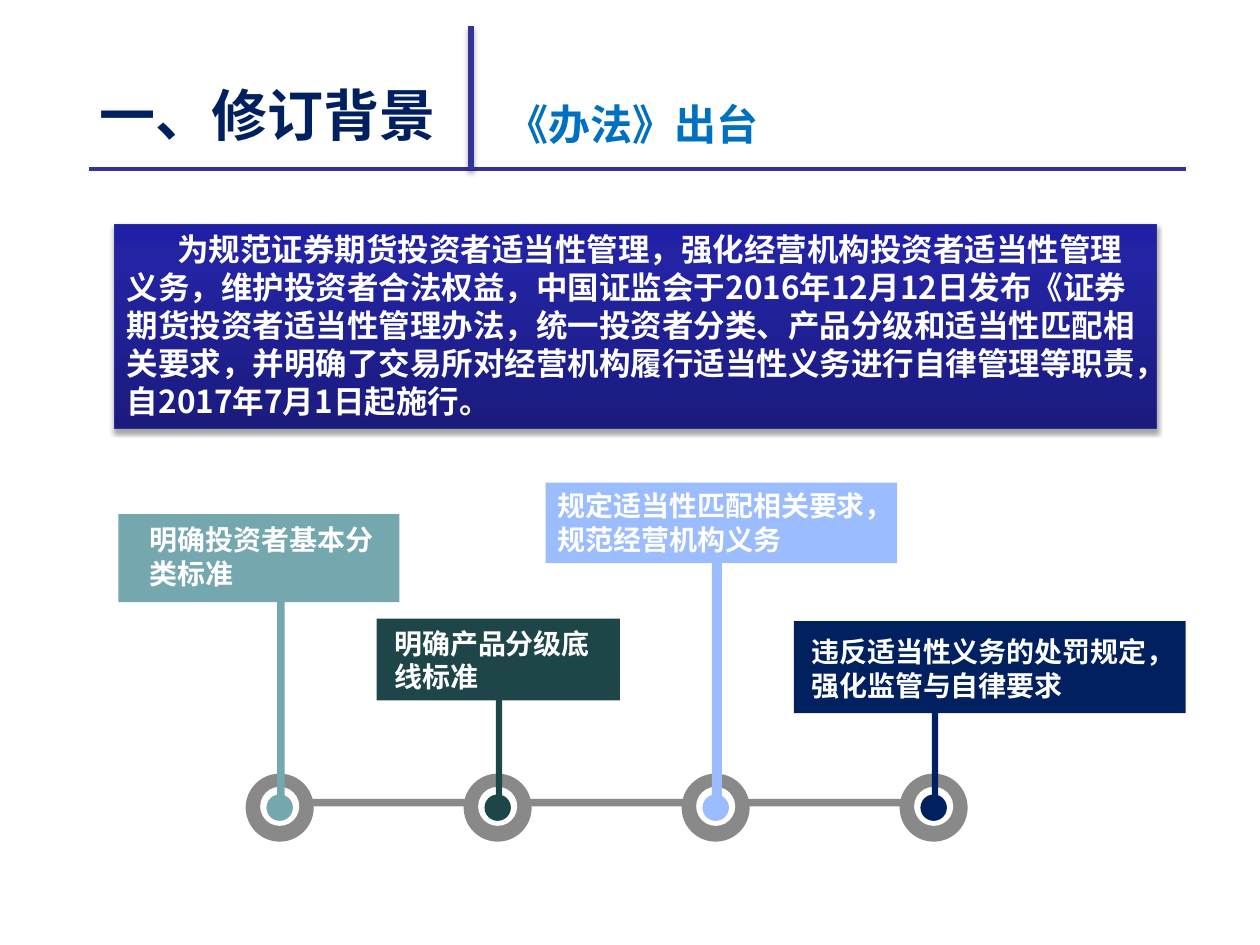
import pptx
import pptx.util
import pptx.dml.color
import pptx.enum.shapes
import pptx.enum.text
import copy
from lxml import etree

FONT = "Noto Sans CJK SC"
COLORS = {
    "navy": "002060", "blue": "0070C0", "rule": "333399", "grey": "898989",
    "white": "FFFFFF", "teal": "74A7AE", "pine": "1E4649", "sky": "9BBCFF",
    "border": "2F2F98", "deep": "1B1B7E", "mid": "2323A3", "bright": "2020A6",
}
# The slide is a grid of 100 columns by 75 rows.
COLUMNS, ROWS, CELL = 100, 75, 0.1

HEADINGS = [
    ("一、修订背景", (7.1, 6, 39, 6.2), 32, "navy"),
    ("《办法》出台", (39.4, 7.4, 39, 4.9), 24, "blue"),
]
INTRO = (
    "为规范证券期货投资者适当性管理，强化经营机构投资者适当性管理义务，维护投资者合法权益，"
    "中国证监会于2016年12月12日发布《证券期货投资者适当性管理办法，统一投资者分类、"
    "产品分级和适当性匹配相关要求，并明确了交易所对经营机构履行适当性义务进行自律管理等职责，"
    "自2017年7月1日起施行。"
)
# label, colour, box, insets (left, top, right), stem width
MILESTONES = [
    ("明确投资者基本分类标准", "teal", (9.4, 4.08 / CELL, 22.3, 7), (2.5, 0.7, 0.8), 0.6),
    ("明确产品分级底线标准", "pine", (29.9, 49.1, 19.3, 6.5), (1.4, 0.6, 1), 0.5),
    ("规定适当性匹配相关要求，规范经营机构义务", "sky", (43.3, 38.3, 27.9, 6.4), (1, 0.5, 1), 0.8),
    ("违反适当性义务的处罚规定，强化监管与自律要求", "navy", (63, 49.3, 31.1, 7.3), (1.4, 1.1, 1.7), 0.5),
]
FIRST_CENTER, CENTER_STEP, AXIS = 22.2, 17.3, 64.1
RINGS = [("grey", 5.4, AXIS), ("white", 3.1, AXIS - 0.1), (None, 2.1, AXIS)]  # None: own colour
SHAPES = pptx.enum.shapes.MSO_SHAPE


def cells(*counts):
    return [pptx.util.Inches(count * CELL) for count in counts]


def rgb(name):
    return pptx.dml.color.RGBColor.from_string(COLORS[name])


def add_block(page, kind, place, color):
    block = page.shapes.add_shape(kind, *cells(*place))
    block.shadow.inherit = False
    block.fill.solid()
    block.fill.fore_color.rgb = rgb(color)
    block.line.fill.background()
    return block


def add_rule(page, start, end, width):
    rule = page.shapes.add_connector(
        pptx.enum.shapes.MSO_CONNECTOR.STRAIGHT, *cells(*start, *end))
    rule.line.color.rgb = rgb("rule")
    rule.line.width = pptx.util.Pt(width)
    etree.SubElement(rule._element.spPr, pptx.oxml.ns.qn("a:effectLst"))
    return rule


def add_shadow(shape):
    """Put a soft downward shadow into the shape's empty effect list."""
    qn = pptx.oxml.ns.qn
    effects = shape._element.spPr.find(qn("a:effectLst"))
    outer = etree.SubElement(effects, qn("a:outerShdw"), blurRad="39370",
                             dist="22860", dir="5400000", rotWithShape="0")
    tint = etree.SubElement(outer, qn("a:srgbClr"), val="000000")
    etree.SubElement(tint, qn("a:alpha"), val="35000")


def write(box, text, size, color="white", insets=(1, 0.5, 1), indent=0, anchor="TOP"):
    frame = box.text_frame
    frame.word_wrap = True
    frame.vertical_anchor = getattr(pptx.enum.text.MSO_ANCHOR, anchor)
    frame.margin_left, frame.margin_top, frame.margin_right = cells(*insets)
    frame.margin_bottom = 0
    para = frame.paragraphs[0]
    para.alignment = pptx.enum.text.PP_ALIGN.LEFT
    if indent:
        para._p.get_or_add_pPr().set("indent", str(cells(indent)[0]))
    span = para.add_run()
    span.text = text
    span.font.size = pptx.util.Pt(size)
    span.font.bold = True
    span.font.color.rgb = rgb(color)
    span.font.name = FONT
    etree.SubElement(span._r.get_or_add_rPr(), pptx.oxml.ns.qn("a:ea"), typeface=FONT)


def add_header(page):
    for text, place, size, color in HEADINGS:
        box = page.shapes.add_textbox(*cells(*place))
        write(box, text, size, color, insets=(0.8, 0.4, 0.8))
    add_rule(page, (7.1, 13.4), (94.1, 13.4), 2)
    add_shadow(add_rule(page, (37.4, 2.1), (37.4, 13.5), 3.5))


def add_intro(page):
    panel = add_block(page, SHAPES.RECTANGLE, (9.1, 17.8, 82.7, 16.2), "deep")
    panel.fill.gradient()
    panel.fill.gradient_angle = 90
    first = panel.fill.gradient_stops[0]._gs
    first.addnext(copy.deepcopy(first))
    stops = zip(panel.fill.gradient_stops, ("deep", "mid", "bright"), (0, 0.8, 1))
    for stop, color, position in stops:
        stop.color.rgb = rgb(color)
        stop.position = position
    panel.line.color.rgb = rgb("border")
    panel.line.width = pptx.util.Pt(0.75)
    add_shadow(panel)
    write(panel, INTRO, 18, indent=4)


def add_timeline(page):
    length = CENTER_STEP * (len(MILESTONES) - 1)
    add_block(page, SHAPES.RECTANGLE, (FIRST_CENTER, 63.4, length, 0.6), "grey")
    for index, (label, color, place, insets, stem) in enumerate(MILESTONES):
        center = FIRST_CENTER + index * CENTER_STEP
        for ring, size, middle in RINGS:
            add_block(page, SHAPES.OVAL,
                      (center - size / 2, middle - size / 2, size, size), ring or color)
        top = place[1] + place[3] / 2
        add_block(page, SHAPES.RECTANGLE,
                  (center + 0.1 - stem / 2, top, stem, AXIS - top), color)
        write(add_block(page, SHAPES.RECTANGLE, place, color), label, 16, insets=insets)


def main():
    deck = pptx.Presentation()
    deck.slide_width, deck.slide_height = cells(COLUMNS, ROWS)
    page = deck.slides.add_slide(deck.slide_layouts[6])
    add_header(page)
    add_intro(page)
    add_timeline(page)
    deck.save("out.pptx")


if __name__ == "__main__":
    main()
